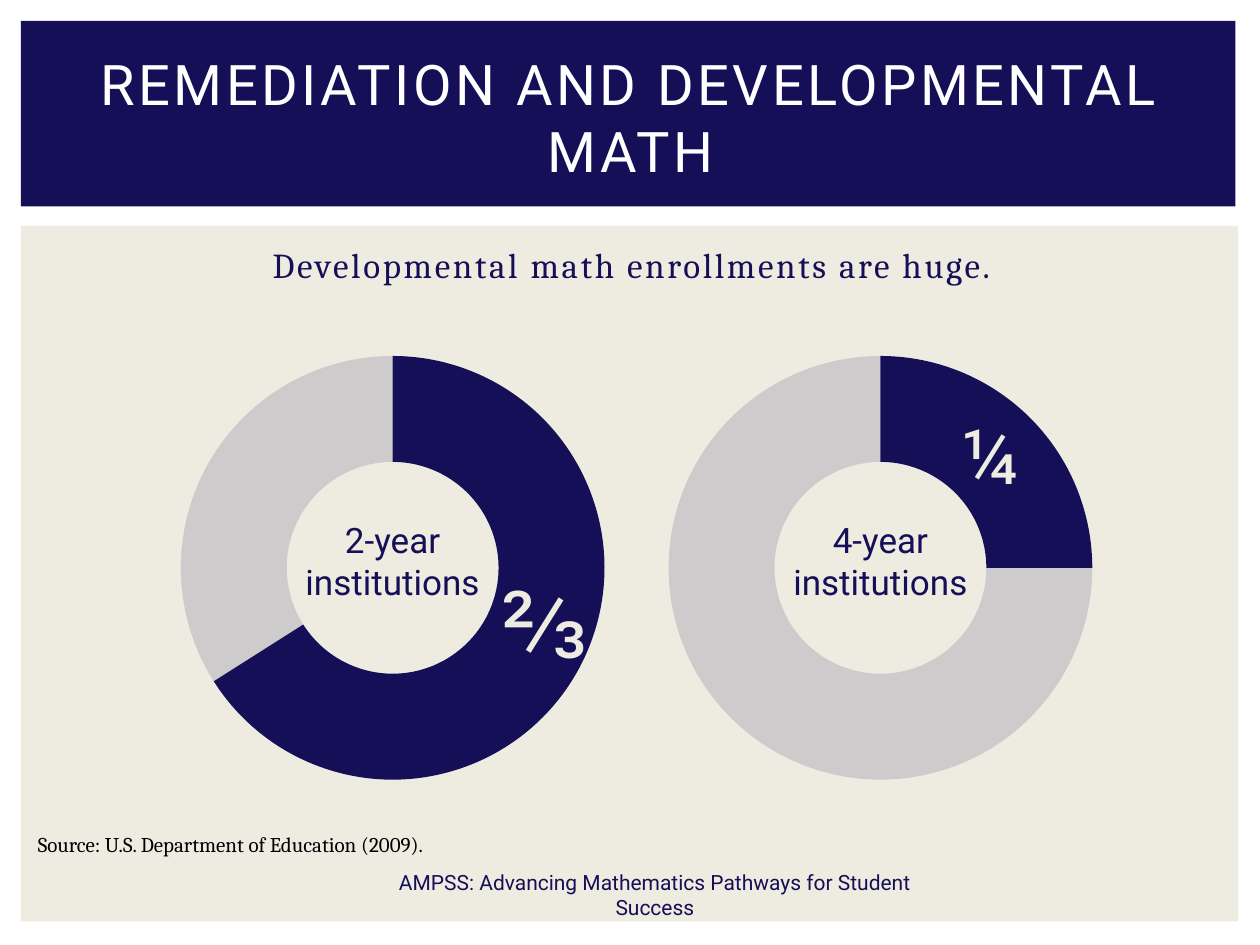
from lxml import etree
from pptx import Presentation
from pptx.chart.data import CategoryChartData
from pptx.dml.color import RGBColor
from pptx.enum.chart import XL_CHART_TYPE
from pptx.enum.shapes import MSO_SHAPE
from pptx.enum.text import MSO_ANCHOR, MSO_AUTO_SIZE, PP_ALIGN
from pptx.oxml.ns import qn
from pptx.util import Pt

# Content
COLORS = {"navy": "150F57", "cream": "EEECE1", "white": "FFFFFF", "black": "000000"}
TITLE = "REMEDIATION AND DEVELOPMENTAL MATH"
PANELS = [  # box, colour
    ((12, 129, 695.5, 397.5), "cream"),
    ((12, 12, 694, 106), "navy"),
]
TEXTS = [  # text, box, format
    ("Developmental math enrollments are huge.", (30, 135.5, 662, 347),
     dict(size=20, font="Cambria", spacing=1.5, before=4)),
    ("AMPSS: Advancing Mathematics Pathways for Student Success",
     (197.5, 500.5, 353.5, 21.5), dict(size=12, anchor=MSO_ANCHOR.MIDDLE)),
    ("Source: U.S. Department of Education (2009).", (14.5, 471.5, 690.5, 21.5),
     dict(size=12, font="Cambria", color="black", align=PP_ALIGN.LEFT,
          anchor=MSO_ANCHOR.MIDDLE)),
]
RINGS = [  # label, values, fraction, fraction box, fraction size
    ("2-year institutions", (66, 34), "⅔", (278.5, 319, 51, 72.5), 54),
    ("4-year institutions", (25, 75), "¼", (540.5, 229.5, 51, 60.5), 44),
]
RING_LEFT, RING_TOP, RING_W, RING_H = 85, 193.5, 278.75, 262
LABEL_TOP, LABEL_W, LABEL_H = 292.5, 138, 55.5
REST_ALPHA = 15  # percent


def rgb(name):
    return RGBColor.from_string(COLORS[name])


def place(sp, box):
    for name, value in zip(("left", "top", "width", "height"), box):
        setattr(sp, name, Pt(value))


def write(sp, text, size, font="Roboto", color="navy", align=PP_ALIGN.CENTER,
          anchor=MSO_ANCHOR.TOP, spacing=0, before=0):
    tf = sp.text_frame
    for name, value in dict(word_wrap=True, auto_size=MSO_AUTO_SIZE.NONE,
                            vertical_anchor=anchor).items():
        setattr(tf, name, value)
    p = tf.paragraphs[0]
    p.alignment, p.space_before = align, Pt(before)
    r = p.add_run()
    r.text = text
    for name, value in dict(size=Pt(size), name=font, bold=False).items():
        setattr(r.font, name, value)
    r.font.color.rgb = rgb(color)
    if spacing:
        r._r.get_or_add_rPr().set("spc", str(int(spacing * 100)))


def add_text(s, text, box, **fmt):
    write(s.shapes.add_textbox(*map(Pt, box)), text, **fmt)


def add_ring(s, values, box):
    data = CategoryChartData()
    data.categories = ["1", "2"]
    data.add_series("Series 1", values)
    chart = s.shapes.add_chart(XL_CHART_TYPE.DOUGHNUT, *map(Pt, box), data).chart
    chart.has_legend = chart.has_title = False
    chart.font.size, chart.font.name = Pt(18), "Calibri"
    chart.font.color.rgb = rgb("black")
    plot = chart.plots[0]
    plot.vary_by_categories = True
    plot._element.find(qn("c:holeSize")).set("val", "50")
    for i in range(len(values)):
        fmt = plot.series[0].points[i].format
        fmt.fill.solid()
        fmt.fill.fore_color.rgb = rgb("navy")
        fmt.line.fill.background()
    # The remainder is a pale tint of the same colour
    color = fmt.fill._xPr.find(qn("a:solidFill"))[0]
    etree.SubElement(color, qn("a:alpha")).set("val", str(REST_ALPHA * 1000))


def main():
    prs = Presentation()
    prs.slide_width, prs.slide_height = Pt(720), Pt(540)
    s = prs.slides.add_slide(prs.slide_layouts[5])

    # Background panels
    for box, color in PANELS:
        sp = s.shapes.add_shape(MSO_SHAPE.RECTANGLE, *map(Pt, box))
        sp.shadow.inherit = False
        sp.fill.solid()
        sp.fill.fore_color.rgb = rgb(color)
        sp.line.fill.background()

    # Title, brought in front of its panel
    title = s.shapes.title
    s.shapes._spTree.append(title._element)
    place(title, (22.5, 25, 675.5, 83))
    write(title, TITLE, 32, color="white", anchor=MSO_ANCHOR.MIDDLE, spacing=2)

    # Statement, footer and source
    for text, box, fmt in TEXTS:
        add_text(s, text, box, **fmt)

    # Rings with centre labels and fractions
    for i, (label, values, fraction, box, size) in enumerate(RINGS):
        left = RING_LEFT + i * RING_W
        add_ring(s, values, (left, RING_TOP, RING_W, RING_H))
        label_left = left + (RING_W - LABEL_W) / 2
        add_text(s, label, (label_left, LABEL_TOP, LABEL_W, LABEL_H), size=20)
        add_text(s, fraction, box, size=size, color="cream")

    prs.save("out.pptx")


if __name__ == "__main__":
    main()
